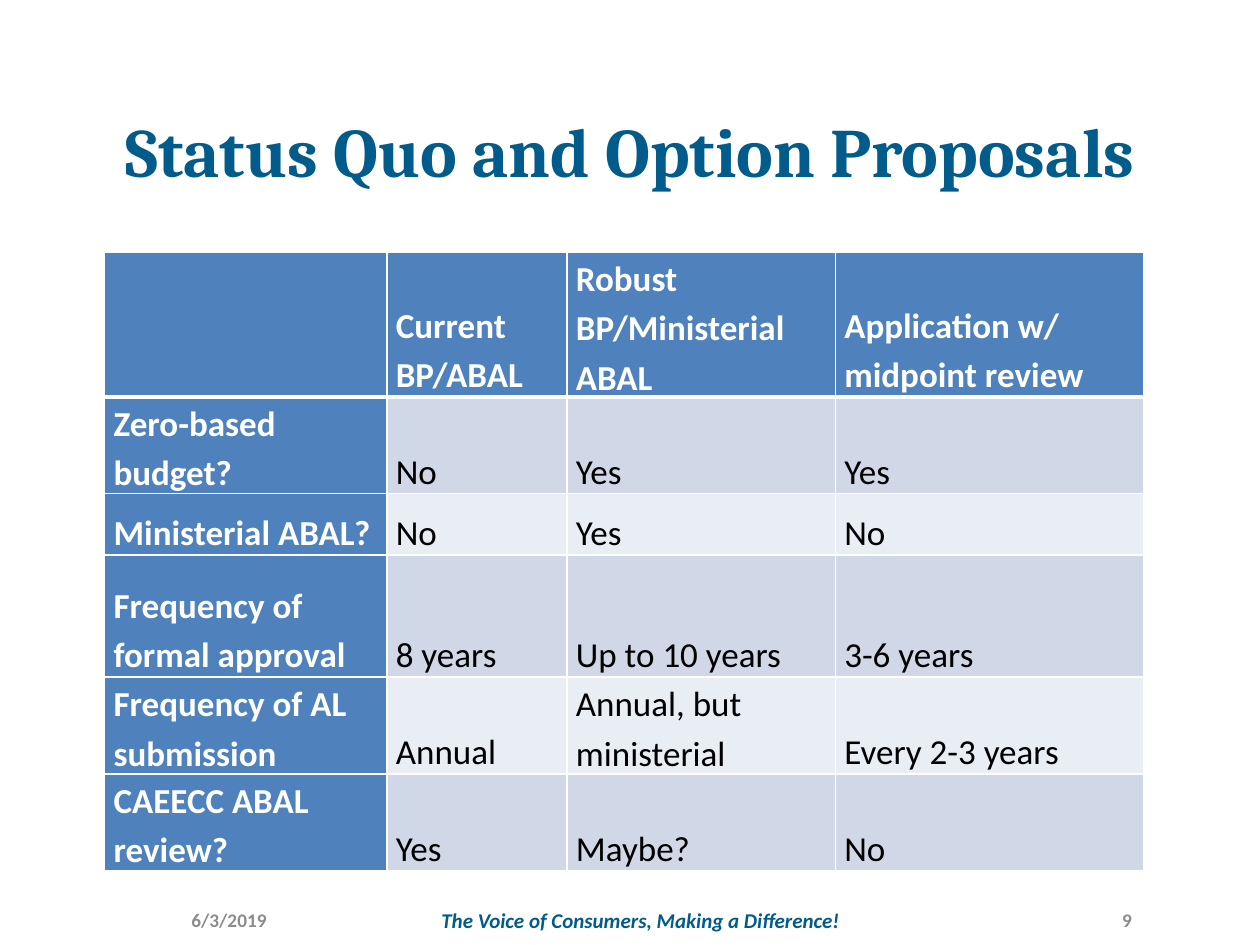
from lxml import etree
from pptx import Presentation
from pptx.dml.color import RGBColor
from pptx.enum.text import MSO_ANCHOR, PP_ALIGN
from pptx.oxml.ns import qn
from pptx.util import Cm, Pt

LEFT, CENTER, RIGHT = PP_ALIGN.LEFT, PP_ALIGN.CENTER, PP_ALIGN.RIGHT
MIDDLE, BOTTOM = MSO_ANCHOR.MIDDLE, MSO_ANCHOR.BOTTOM

COLORS = {
    "title": "025C8B",
    "footer": "8C8C8C",
    "header": "4F81BD",
    "band_dark": "D0D8E8",
    "band_light": "E9EDF4",
    "white": "FFFFFF",
    "black": "000000",
}

# Content: header row first, row labels in the first column
ROWS = [
    ["", "Current BP/ABAL", "Robust BP/Ministerial ABAL", "Application w/ midpoint review"],
    ["Zero-based budget?", "No", "Yes", "Yes"],
    ["Ministerial ABAL?", "No", "Yes", "No"],
    ["Frequency of formal approval", "8 years", "Up to 10 years", "3-6 years"],
    ["Frequency of AL submission", "Annual", "Annual, but ministerial", "Every 2-3 years"],
    ["CAEECC ABAL review?", "Yes", "Maybe?", "No"],
]
COLUMN_WIDTHS = [5.69, 3.63, 5.41, 6.22]
ROW_HEIGHTS = [2.46, 1.24, 1.24, 2.46, 1.24, 1.24]
TABLE_BOX = (2.11, 5.08, sum(COLUMN_WIDTHS), 12.24)

FOOTER_TOP, FOOTER_HEIGHT = 18.03, 1.02
FOOTER_FONT = {"name": "Calibri", "size": Pt(11), "bold": True}

# Text boxes: text, box in cm, alignment, colour, font
TEXT_BOXES = [
    ("Status Quo and Option Proposals", (1.27, 2.11, 22.86, 1.83), CENTER, "title",
     {"name": "Cambria", "size": Pt(39.6), "bold": True}),
    ("6/3/2019", (3.61, FOOTER_TOP, 3.81, FOOTER_HEIGHT), LEFT, "footer", FOOTER_FONT),
    ("The Voice of Consumers, Making a Difference!",
     (7.62, FOOTER_TOP, 10.59, FOOTER_HEIGHT), CENTER, "title",
     {"name": "Calibri", "size": Pt(12), "bold": True, "italic": True}),
    ("9", (18.42, FOOTER_TOP, 4.65, FOOTER_HEIGHT), RIGHT, "footer", FOOTER_FONT),
]


def rgb(name):
    return RGBColor.from_string(COLORS[name])


def set_format(target, values):
    for name, value in values.items():
        setattr(target, name, value)


def write_text(paragraph, text, color, font):
    paragraph.text = text
    set_format(paragraph.font, font)
    paragraph.font.color.rgb = rgb(color)


def add_text_box(slide, text, box, alignment, color, font):
    frame = slide.shapes.add_textbox(*map(Cm, box)).text_frame
    set_format(frame, {"word_wrap": True, "vertical_anchor": MIDDLE})
    frame.paragraphs[0].alignment = alignment
    write_text(frame.paragraphs[0], text, color, font)


def add_borders(cell, widths):
    properties = cell._tc.get_or_add_tcPr()
    for side, width in widths.items():
        line = etree.SubElement(properties, qn(f"a:ln{side}"), w=str(Pt(width)))
        fill = etree.SubElement(line, qn("a:solidFill"))
        etree.SubElement(fill, qn("a:srgbClr"), val=COLORS["white"])


def fill_cell(cell, text, row, column):
    is_header = row == 0 or column == 0
    band = "band_dark" if row % 2 else "band_light"
    add_borders(cell, {"L": 1, "R": 1, "T": 3 if row == 1 else 1, "B": 3 if row == 0 else 1})
    cell.fill.solid()
    cell.fill.fore_color.rgb = rgb("header" if is_header else band)
    set_format(cell, {"vertical_anchor": BOTTOM, "margin_left": Cm(0.18),
                      "margin_right": Cm(0.18), "margin_top": 0, "margin_bottom": 0})
    paragraph = cell.text_frame.paragraphs[0]
    paragraph.line_spacing = 1.15
    write_text(paragraph, text, "white" if is_header else "black",
               {"name": "Calibri", "size": Pt(20), "bold": is_header})


def add_options_table(slide):
    shape = slide.shapes.add_table(len(ROWS), len(COLUMN_WIDTHS), *map(Cm, TABLE_BOX))
    table = shape.table
    for column, width in zip(table.columns, COLUMN_WIDTHS):
        column.width = Cm(width)
    for row, height in zip(table.rows, ROW_HEIGHTS):
        row.height = Cm(height)
    shape.height = Cm(TABLE_BOX[3])
    for row, texts in enumerate(ROWS):
        for column, text in enumerate(texts):
            fill_cell(table.cell(row, column), text, row, column)


def main():
    presentation = Presentation()
    presentation.slide_width, presentation.slide_height = Cm(25.4), Cm(19.05)
    slide = presentation.slides.add_slide(presentation.slide_layouts[6])
    for text_box in TEXT_BOXES:
        add_text_box(slide, *text_box)
    add_options_table(slide)
    presentation.save("out.pptx")


if __name__ == "__main__":
    main()
